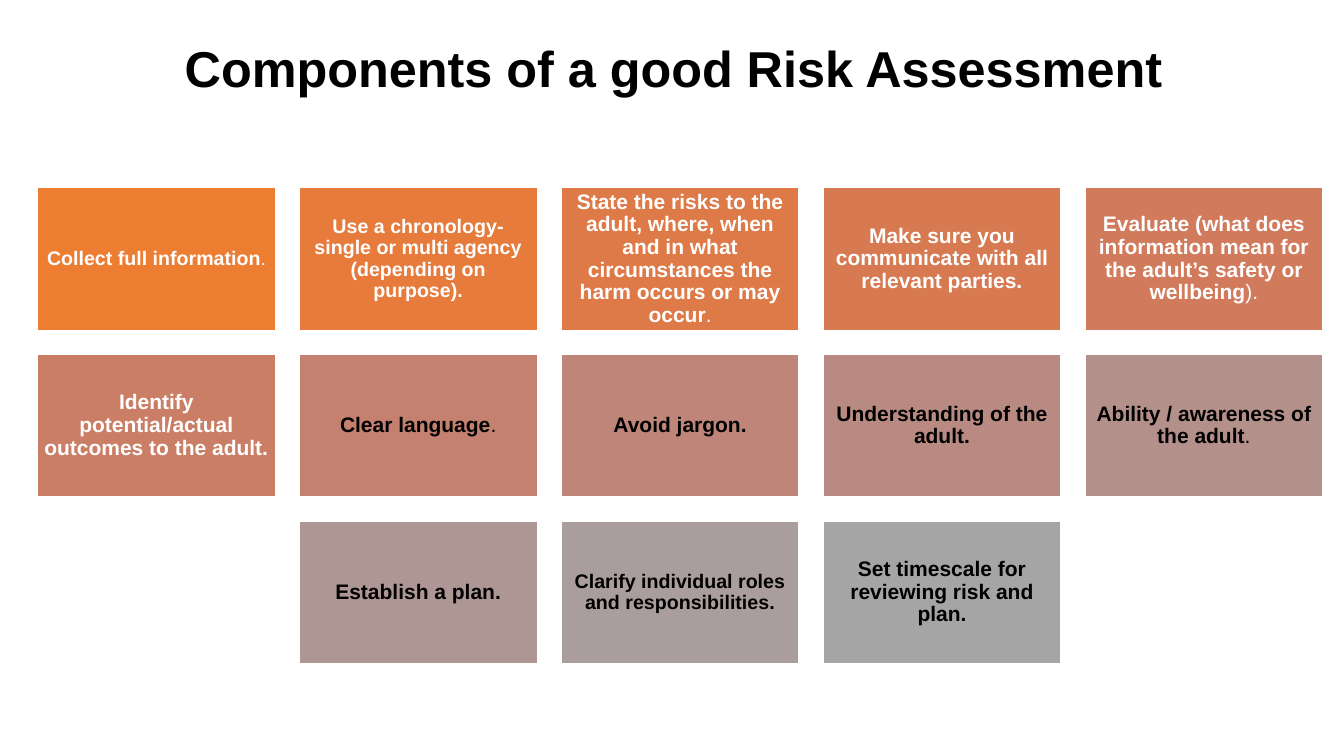
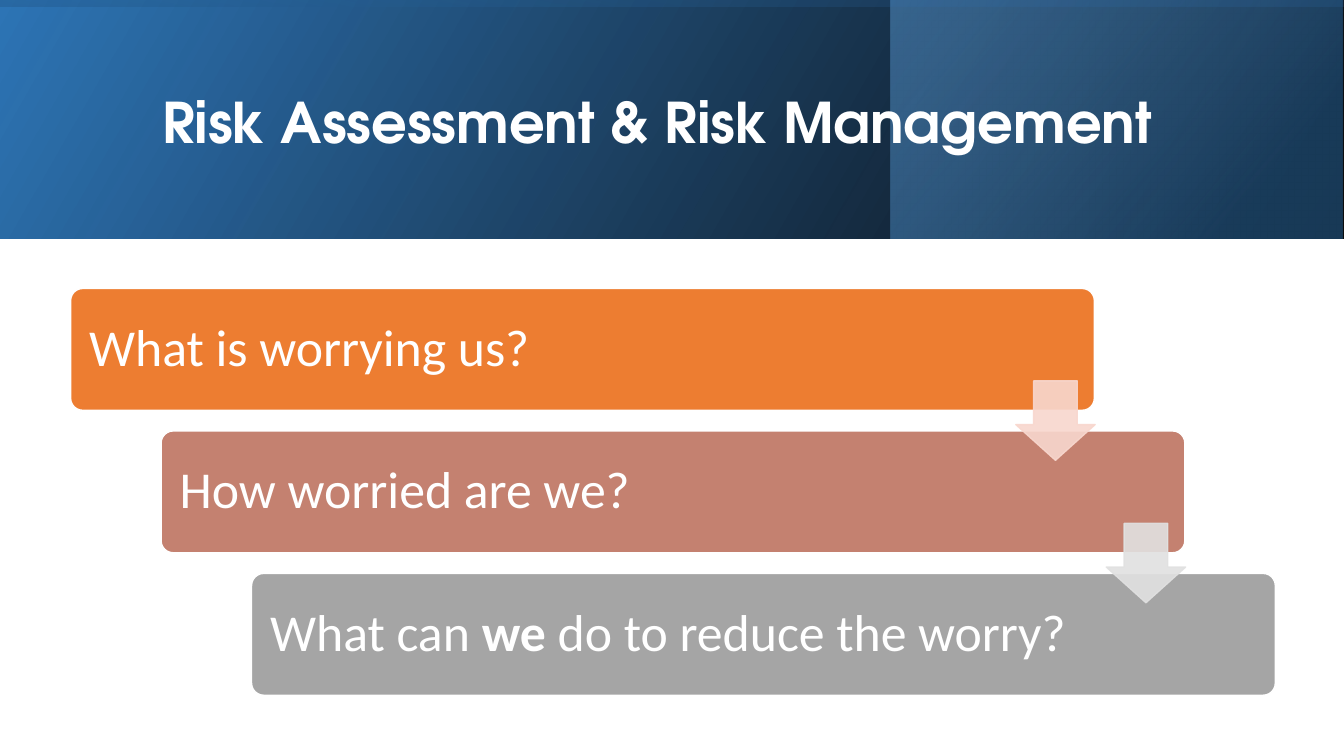
from lxml.etree import SubElement
from pptx import Presentation
from pptx.dml.color import RGBColor
from pptx.enum.shapes import MSO_SHAPE as SHAPE
from pptx.enum.text import MSO_ANCHOR as ANCHOR, MSO_AUTO_SIZE as AUTO, PP_ALIGN as ALIGN
from pptx.oxml.ns import qn
from pptx.util import Cm, Pt

SLIDE_W, SLIDE_H = 33.87, 19.05
WHITE, BLACK = "FFFFFF", "000000"
ORANGE, ROSE, GREY = "ED7D31", "C48170", "A5A5A5"

# fill, text colour, size, bold text, light ending
CARDS = [
    (ORANGE, WHITE, 14, "Collect full information", "."),
    ("E67B3C", WHITE, 14, "Use a chronology- single or multi agency (depending on purpose).", ""),
    ("DE7A47", WHITE, 15, "State the risks to the adult, where, when and in what "
                          "circumstances the harm occurs or may occur", "."),
    ("D87A51", WHITE, 15, "Make sure you communicate with all relevant parties.", ""),
    ("D17B5C", WHITE, 15, "Evaluate (what does information mean for the adult’s "
                          "safety or wellbeing", ")."),
    ("CB7E66", WHITE, 15, "Identify potential/actual outcomes to the adult.", ""),
    (ROSE, BLACK, 15, "Clear language", "."),
    ("BF8579", BLACK, 15, "Avoid jargon.", ""),
    ("B98A82", BLACK, 15, "Understanding of the adult.", ""),
    ("B4908B", BLACK, 15, "Ability / awareness of the adult", "."),
    ("AE9694", BLACK, 15, "Establish a plan.", ""),
    ("AA9D9D", BLACK, 14, "Clarify individual roles and responsibilities.", ""),
    (GREY, BLACK, 15, "Set timescale for reviewing risk and plan.", ""),
]
COLUMNS = 5
CARD_W, CARD_H, CARD_GAP = 6, 3.6, 0.6
CARDS_LEFT, CARDS_TOP = 0.94, 4.73

# fill, runs as (text, bold)
STEPS = [
    (ORANGE, [("What is worrying us?", False)]),
    (ROSE, [("How worried are we?", False)]),
    (GREY, [("What can ", False), ("we", True), (" do to reduce the worry?", False)]),
]
ARROW_COLORS = ["F8D7CE", "E1E1E1"]
STEP_W, STEP_H = 25.8, 3.07
STEP_LEFT, STEP_TOP = 1.78, 7.27
STEP_DX, STEP_DY = 2.28, 3.59
ARROW_LEFT, ARROW_TOP, ARROW_SIZE = 25.6, 9.6, 2

BAND_H = 6.02
BAND_SHIFT = (SLIDE_W - BAND_H) / 2
# box, rotation, gradient angle, stops as (position %, colour, opacity %)
BANDS = [
    ((0, 0, SLIDE_W, BAND_H), 0, 330, [(0, BLACK, 96), (100, "2E75B6", 100)]),
    ((22.45, 0, 11.38, BAND_H), 0, 320, [(19, "1F4E79", 68), (100, "5B9BD5", 48)]),
    ((BAND_SHIFT, -BAND_SHIFT, BAND_H, SLIDE_W), 270, 350,
     [(23, "2E75B6", 16), (99, BLACK, 45)]),
]


def rgb(color):
    return RGBColor.from_string(color)


def add_box(s, kind, box, fill=None, line=None):
    sp = s.shapes.add_shape(kind, *map(Cm, box))
    sp.shadow.inherit = False
    if fill:
        sp.fill.solid()
        sp.fill.fore_color.rgb = rgb(fill)
    if line:
        sp.line.color.rgb = rgb(line)
        sp.line.width = Pt(1)
    else:
        sp.line.fill.background()
    return sp


def write(sp, runs, font, size, color, align, inset=0.25):
    """Fill a shape with one paragraph of (text, bold) runs."""
    tf = sp.text_frame
    tf.word_wrap = True
    tf.auto_size = AUTO.NONE
    tf.vertical_anchor = ANCHOR.MIDDLE
    tf.margin_left = tf.margin_right = tf.margin_top = tf.margin_bottom = Cm(inset)
    p = tf.paragraphs[0]
    p.alignment = align
    p.line_spacing = 0.9
    p.font.name = font
    p.font.size = Pt(size)
    p.font.color.rgb = rgb(color)
    for text, bold in runs:
        r = p.add_run()
        r.text = text
        r.font.bold = bold
    return p


def add_title(s, text, box, font, size, color, align):
    title = s.shapes.title
    title.left, title.top, title.width, title.height = map(Cm, box)
    write(title, [(text, True)], font, size, color, align)
    s.shapes._spTree.append(title._element)  # in front of the bands


def set_gradient(sp, angle, stops):
    spPr = sp._element.spPr
    grad = SubElement(spPr, qn("a:gradFill"), rotWithShape="1")
    spPr.find(qn("a:prstGeom")).addnext(grad)
    gs_list = SubElement(grad, qn("a:gsLst"))
    for pos, color, opacity in stops:
        gs = SubElement(gs_list, qn("a:gs"), pos=str(pos * 1000))
        clr = SubElement(gs, qn("a:srgbClr"), val=color)
        SubElement(clr, qn("a:alpha"), val=str(opacity * 1000))
    SubElement(grad, qn("a:lin"), ang=str(angle * 60000), scaled="0")


def build_components(s):
    add_title(s, "Components of a good Risk Assessment", (1.22, 0.84, 31.52, 1.93),
              "Arial", 36, BLACK, ALIGN.CENTER)
    for i, (fill, color, size, text, ending) in enumerate(CARDS):
        row, col = divmod(i, COLUMNS)
        in_row = min(COLUMNS, len(CARDS) - row * COLUMNS)
        col += (COLUMNS - in_row) / 2  # a short row is centred
        box = (CARDS_LEFT + col * (CARD_W + CARD_GAP),
               CARDS_TOP + row * (CARD_H + CARD_GAP), CARD_W, CARD_H)
        sp = add_box(s, SHAPE.RECTANGLE, box, fill, WHITE)
        runs = [(text, True)] + ([(ending, False)] if ending else [])
        p = write(sp, runs, "Arial", size, color, ALIGN.CENTER, 0.15)
        if i == 0:
            p.runs[-1].font.name = "Calibri"
            p.runs[-1].font.size = Pt(13)


def build_management(s):
    for box, rotation, angle, stops in BANDS:
        band = add_box(s, SHAPE.RECTANGLE, box)
        band.rotation = rotation
        band._element.spPr.find(qn("a:xfrm")).set("flipH", "1")
        set_gradient(band, angle, stops)
    add_title(s, "Risk Assessment & Risk Management", (3.84, 0.97, 27, 4.37),
              "TeX Gyre Adventor", 40, WHITE, ALIGN.LEFT)
    for i, (fill, runs) in enumerate(STEPS):
        box = (STEP_LEFT + i * STEP_DX, STEP_TOP + i * STEP_DY, STEP_W, STEP_H)
        sp = add_box(s, SHAPE.ROUNDED_RECTANGLE, box, fill, WHITE)
        sp.adjustments[0] = 0.1
        write(sp, runs, "Calibri", 37, WHITE, ALIGN.LEFT, 0.38)
    for i, color in enumerate(ARROW_COLORS):
        box = (ARROW_LEFT + i * STEP_DX, ARROW_TOP + i * STEP_DY, ARROW_SIZE, ARROW_SIZE)
        arrow = add_box(s, SHAPE.DOWN_ARROW, box, color, color)
        arrow.adjustments[0], arrow.adjustments[1] = 0.55, 0.45
        for clr in arrow._element.spPr.iter(qn("a:srgbClr")):
            SubElement(clr, qn("a:alpha"), val="90000")


def main():
    prs = Presentation()
    prs.slide_width, prs.slide_height = Cm(SLIDE_W), Cm(SLIDE_H)
    title_only = prs.slide_layouts[5]
    for build in (build_components, build_management):
        build(prs.slides.add_slide(title_only))
    prs.save("out.pptx")


if __name__ == "__main__":
    main()
